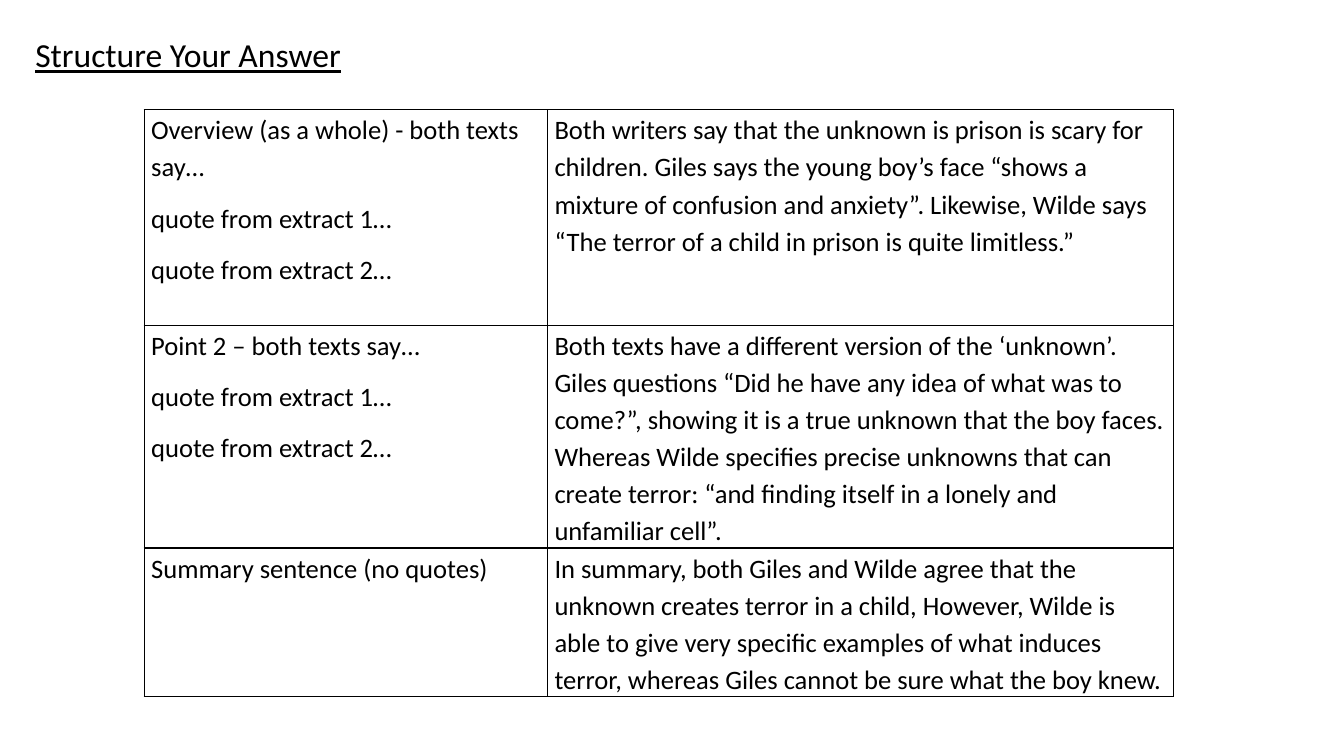
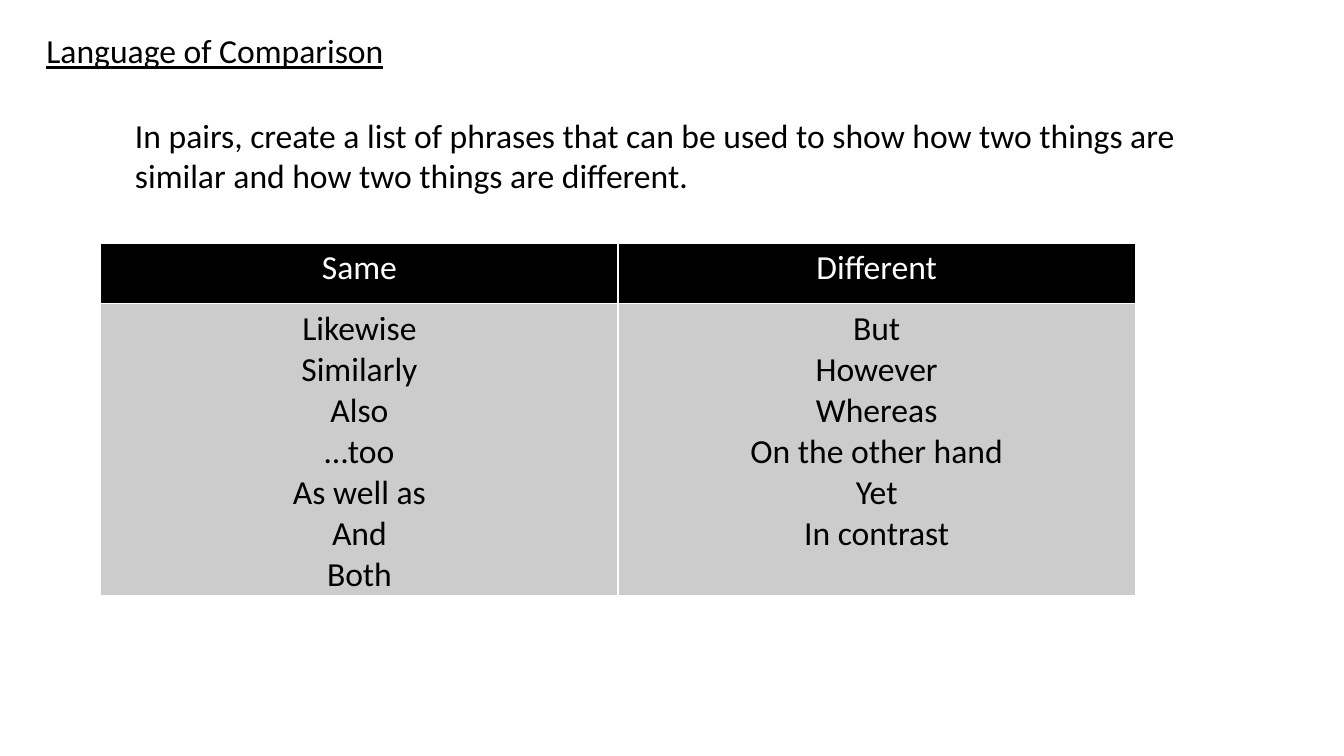
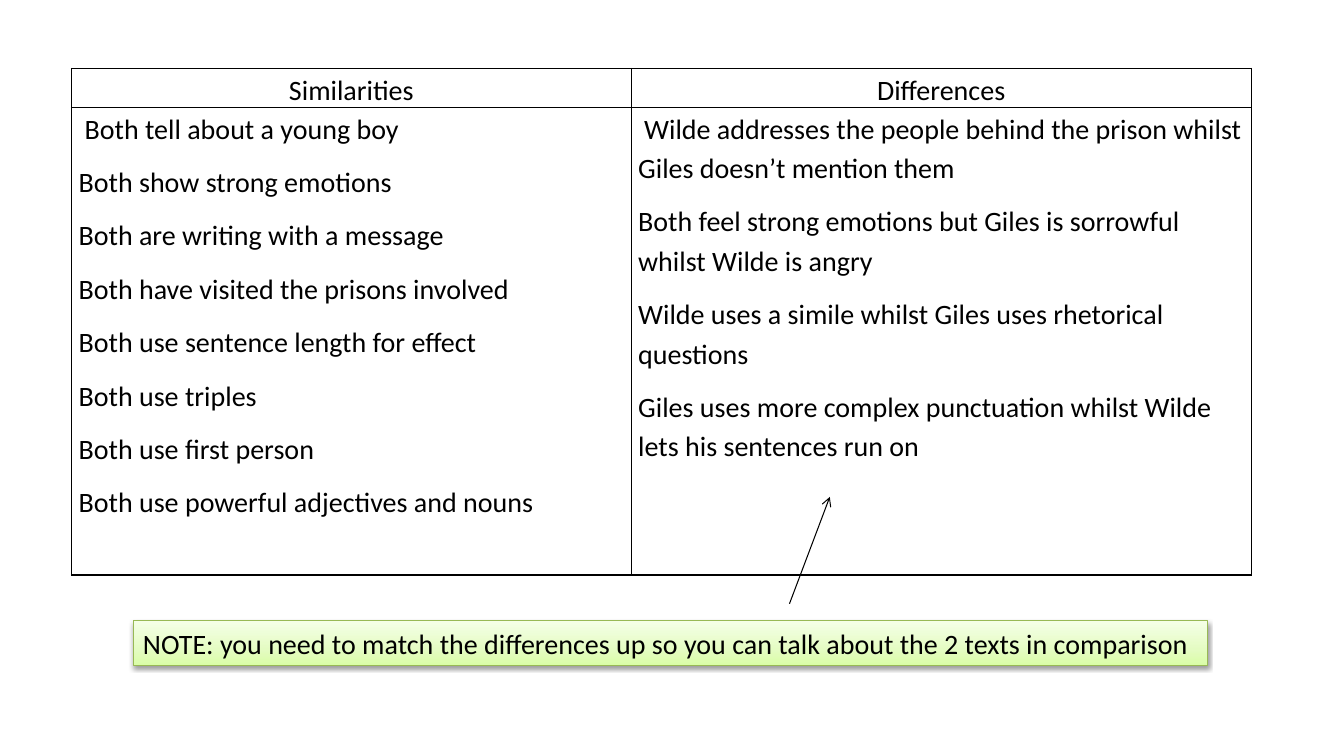
from lxml import etree
from pptx import Presentation, util as u
from pptx.dml.color import RGBColor
from pptx.enum import shapes, text
from pptx.oxml import parse_xml
from pptx.oxml.ns import nsdecls, qn

FONT, BLACK, WHITE, GREY, GREEN = "Calibri", "000000", "FFFFFF", "CCCCCC", "98B955"
WIDTH, HEIGHT = 13.33, 7.5
LEFT, CENTER = text.PP_ALIGN.LEFT, text.PP_ALIGN.CENTER
NOTE_GRADIENT = [(0, "DAFDA7"), (35, "E4FCC2"), (100, "F5FFE7")]

QUOTES = ["quote from extract 1…", "quote from extract 2…"]
ANSWER_PLAN = [
    [["Overview (as a whole) - both texts say…", *QUOTES],
     ["Both writers say that the unknown is prison is scary for children. Giles says the young "
      "boy’s face “shows a mixture of confusion and anxiety”. Likewise, Wilde says “The terror "
      "of a child in prison is quite limitless.”"]],
    [["Point 2 – both texts say…", *QUOTES],
     ["Both texts have a different version of the ‘unknown’. Giles questions “Did he have any "
      "idea of what was to come?”, showing it is a true unknown that the boy faces. Whereas "
      "Wilde specifies precise unknowns that can create terror: “and finding itself in a lonely "
      "and unfamiliar cell”."]],
    [["Summary sentence (no quotes)"],
     ["In summary, both Giles and Wilde agree that the unknown creates terror in a child, "
      "However, Wilde is able to give very specific examples of what induces terror, whereas "
      "Giles cannot be sure what the boy knew."]],
]
TASK = ("In pairs, create a list of phrases that can be used to show how two things are "
        "similar and how two things are different.")
PHRASES = [
    [["Same"], ["Different"]],
    [["Likewise", "Similarly", "Also", "…too", "As well as", "And", "Both"],
     ["But", "However", "Whereas", "On the other hand", "Yet", "In contrast"]],
]
COMPARISON = [
    [["Similarities"], ["Differences"]],
    [["Both tell about a young boy", "Both show strong emotions",
      "Both are writing with a message", "Both have visited the prisons involved",
      "Both use sentence length for effect", "Both use triples", "Both use first person",
      "Both use powerful adjectives and nouns"],
     ["Wilde addresses the people behind the prison whilst Giles doesn’t mention them",
      "Both feel strong emotions but Giles is sorrowful whilst Wilde is angry",
      "Wilde uses a simile whilst Giles uses rhetorical questions",
      "Giles uses more complex punctuation whilst Wilde lets his sentences run on"]],
]
NOTE = "NOTE: you need to match the differences up so you can talk about the 2 texts in comparison"


def rgb(code):
    return RGBColor.from_string(code)


def inches(*lengths):
    return [u.Inches(length) for length in lengths]


def write(frame, lines, size, colour=BLACK, align=LEFT, underline=False, spaced=False):
    frame.text = "\n".join(lines)
    for paragraph in frame.paragraphs:
        paragraph.alignment = align
        if spaced:
            paragraph.line_spacing, paragraph.space_after = 1.15, u.Pt(10)
        for run in paragraph.runs:
            font = run.font
            font.name, font.size, font.underline = FONT, u.Pt(size), underline
            font.color.rgb = rgb(colour)


def add_title(slide, wording, box):
    title = slide.shapes.title
    title.left, title.top, title.width, title.height = inches(*box)
    title.text_frame.vertical_anchor = text.MSO_ANCHOR.TOP
    write(title.text_frame, [wording], 24, underline=True)


def add_borders(cell, colour):
    properties = cell._tc.get_or_add_tcPr()
    for place, side in enumerate("LRTB"):
        properties.insert(place, parse_xml(
            f'<a:ln{side} {nsdecls("a")} w="12700"><a:solidFill><a:srgbClr val="{colour}"/>'
            f'</a:solidFill></a:ln{side}>'))


def add_grid(slide, rows, corner, widths, heights, size, border=BLACK, margins=(0.07, 0),
             fills=None, header=False, all_centred=False, spaced=True):
    frame = slide.shapes.add_table(len(rows), len(widths),
                                   *inches(*corner, sum(widths), sum(heights)))
    table = frame.table
    table.first_row = table.horz_banding = False
    for column, width in zip(table.columns, widths):
        column.width = u.Inches(width)
    for r, (row, height) in enumerate(zip(rows, heights)):
        table.rows[r].height = u.Inches(height)
        centred = all_centred or (header and r == 0)
        for c, lines in enumerate(row):
            cell = table.cell(r, c)
            cell.margin_left = cell.margin_right = u.Inches(margins[0])
            cell.margin_top = cell.margin_bottom = u.Inches(margins[1])
            if fills:
                cell.fill.solid()
                cell.fill.fore_color.rgb = rgb(fills[r])
            else:
                cell.fill.background()
            add_borders(cell, border)
            colour = WHITE if fills and fills[r] == BLACK else BLACK
            write(cell.text_frame, lines, size, colour, CENTER if centred else LEFT,
                  spaced=spaced)
    return table


def add_note(slide, wording, box):
    note = slide.shapes.add_shape(shapes.MSO_SHAPE.RECTANGLE, *inches(*box))
    note.line.color.rgb, note.line.width = rgb(GREEN), u.Pt(0.75)
    stops = "".join(f'<a:gs pos="{share * 1000}"><a:srgbClr val="{colour}"/></a:gs>'
                    for share, colour in NOTE_GRADIENT)
    properties = note._element.spPr
    properties.find(qn("a:prstGeom")).addnext(parse_xml(
        f'<a:gradFill {nsdecls("a")} rotWithShape="1"><a:gsLst>{stops}</a:gsLst>'
        '<a:lin ang="16200000" scaled="0"/></a:gradFill>'))
    properties.append(parse_xml(
        f'<a:effectLst {nsdecls("a")}><a:outerShdw blurRad="40000" dist="20000" dir="5400000" '
        'rotWithShape="0"><a:srgbClr val="000000"><a:alpha val="38000"/></a:srgbClr>'
        '</a:outerShdw></a:effectLst>'))
    note.text_frame.word_wrap = False
    write(note.text_frame, [wording], 20)


def add_arrow(slide, start, end):
    arrow = slide.shapes.add_connector(shapes.MSO_CONNECTOR.STRAIGHT, *inches(*start, *end))
    arrow.line.color.rgb, arrow.line.width = rgb(BLACK), u.Pt(0.75)
    etree.SubElement(arrow.line._get_or_add_ln(), qn("a:tailEnd"), type="arrow")
    etree.SubElement(arrow._element.spPr, qn("a:effectLst"))


def build_answer(deck):
    slide = deck.slides.add_slide(deck.slide_layouts[5])
    add_title(slide, "Structure Your Answer", (0.25, 0.29, 3.5, 0.51))
    add_grid(slide, ANSWER_PLAN, (1.43, 1.09), [4, 6.21], [2.14, 2.19, 1.46], 19)


def build_language(deck):
    slide = deck.slides.add_slide(deck.slide_layouts[5])
    add_title(slide, "Language of Comparison", (0.36, 0.25, 6.64, 0.51))
    task = slide.shapes.add_textbox(*inches(1.24, 1.09, 11.16, 0.91))
    task.text_frame.word_wrap = True
    write(task.text_frame, [TASK], 24)
    add_grid(slide, PHRASES, (1, 2.41), [5.13] * 2, [0.6, 2.9], 24, WHITE, (0.1, 0.05),
             fills=[BLACK, GREY], all_centred=True, spaced=False)


def build_comparison(deck):
    slide = deck.slides.add_slide(deck.slide_layouts[6])
    table = add_grid(slide, COMPARISON, (0.71, 0.68), [5.55, 6.15], [0.38, 4.64], 20,
                     header=True)
    for column in range(2):
        opening = table.cell(1, column).text_frame.paragraphs[0]
        opening._p.get_or_add_pPr().set("indent", str(u.Inches(0.06)))
    add_note(slide, NOTE, (1.32, 6.16, 10.66, 0.44))
    add_arrow(slide, (7.83, 5.99), (8.23, 4.93))


def main():
    deck = Presentation()
    deck.slide_width, deck.slide_height = inches(WIDTH, HEIGHT)
    build_answer(deck)
    build_language(deck)
    build_comparison(deck)
    deck.save("out.pptx")


if __name__ == "__main__":
    main()
